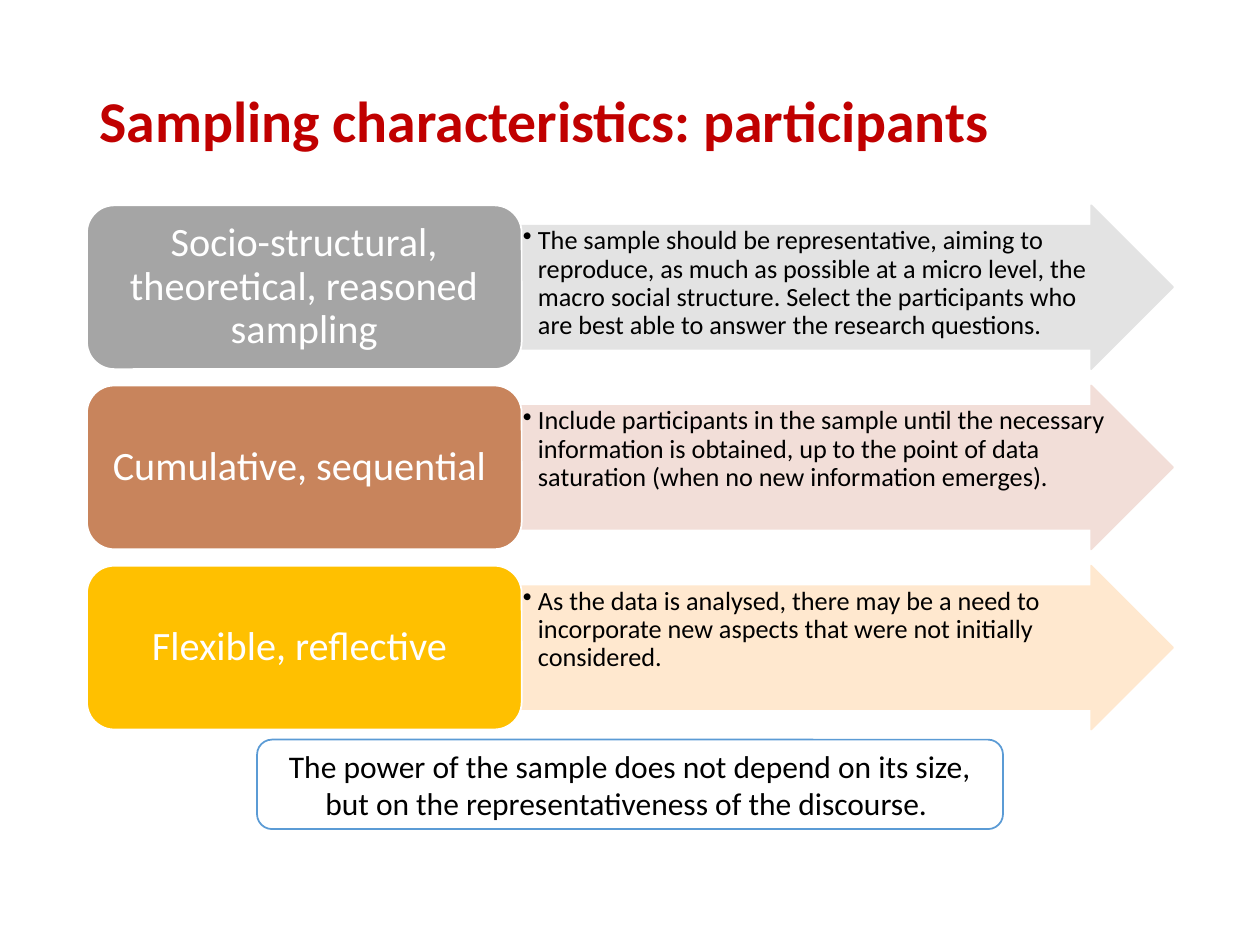
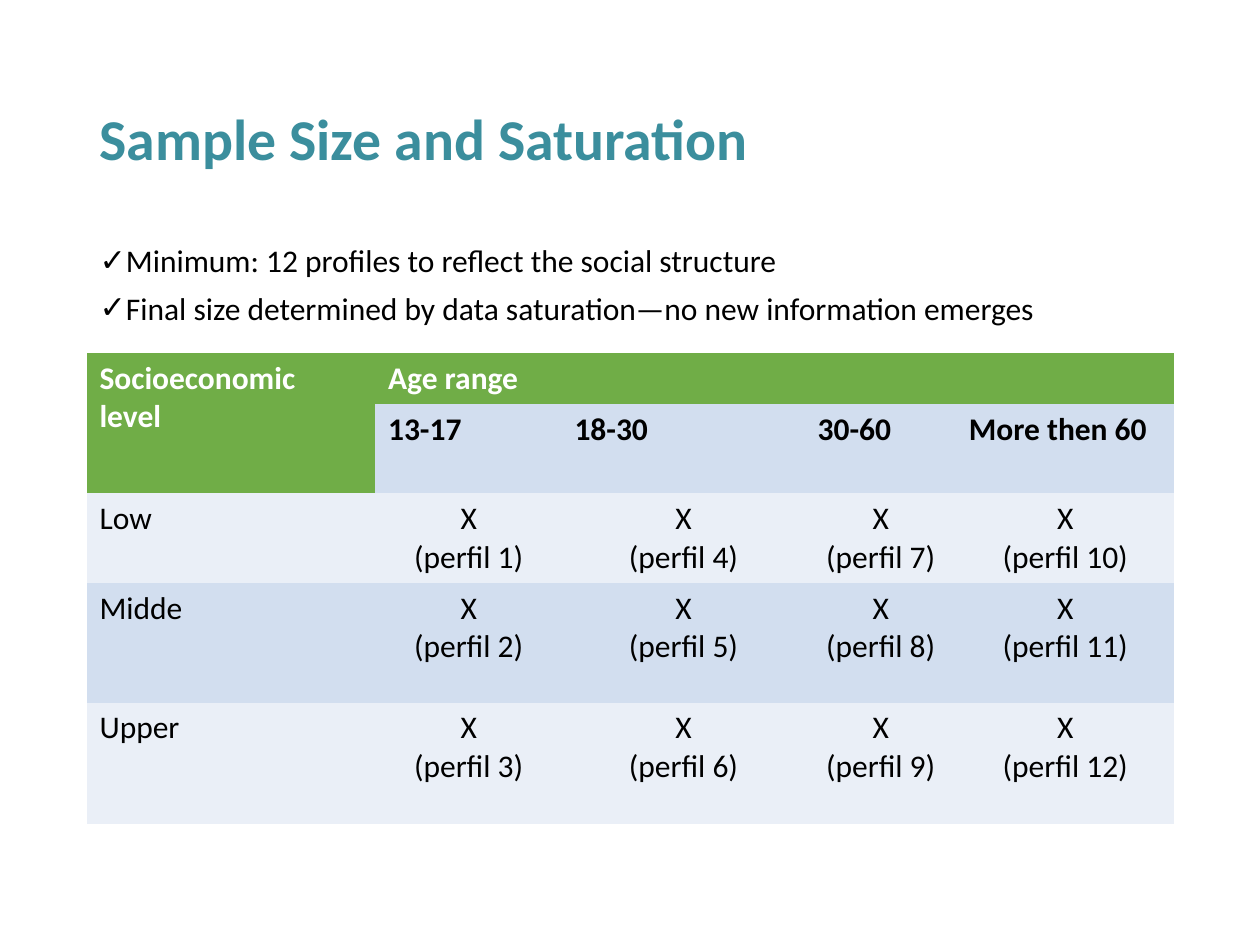
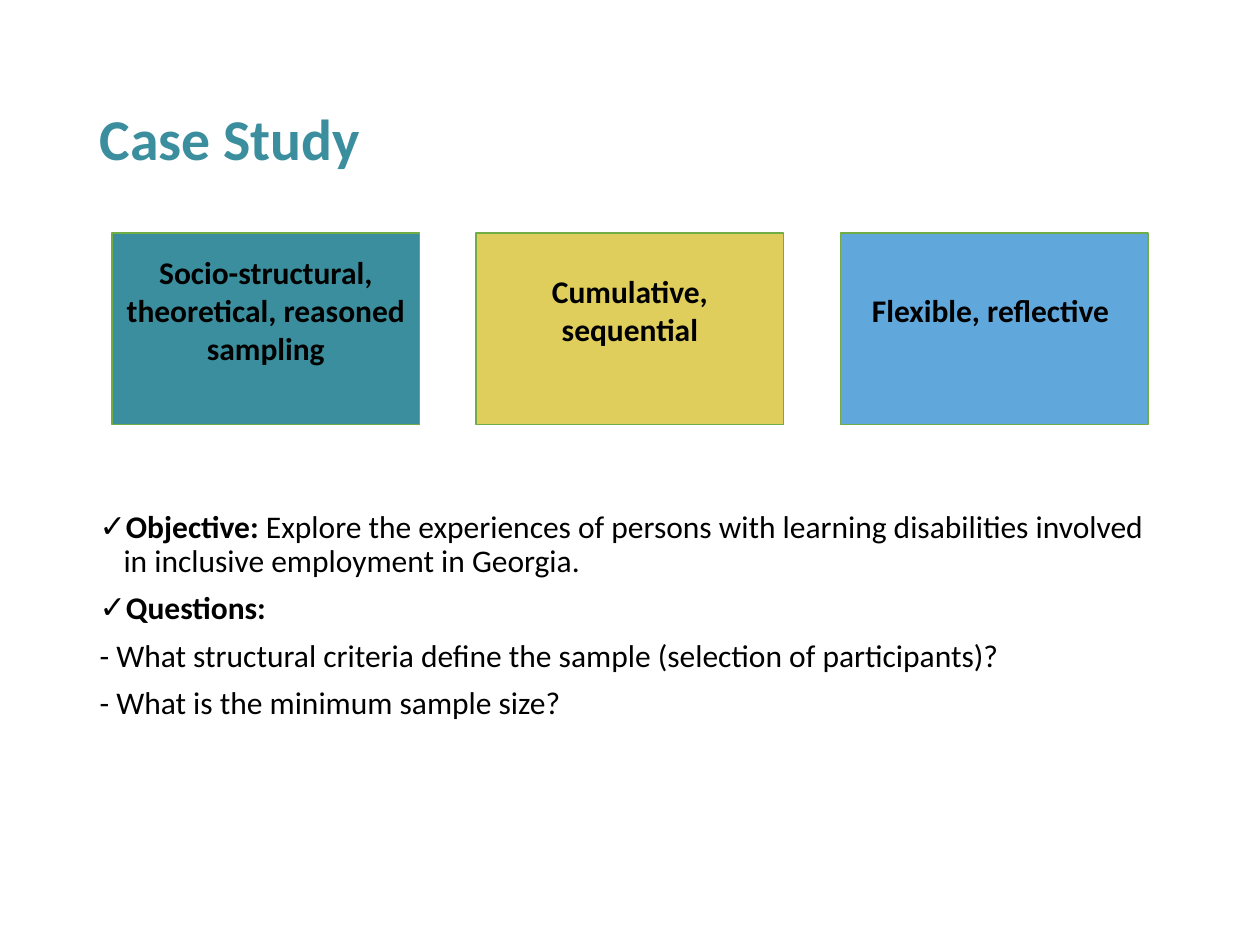
from lxml.etree import SubElement
from pptx import Presentation
from pptx.dml.color import RGBColor
from pptx.enum.shapes import MSO_SHAPE
from pptx.enum.text import MSO_ANCHOR, MSO_AUTO_SIZE, PP_ALIGN
from pptx.oxml.ns import qn
from pptx.util import Inches, Pt

FONT = "Calibri"
PLAIN = "{2D5ABB26-0587-4C30-8999-92F81FD0307C}"
BLACK = RGBColor(0x00, 0x00, 0x00)
WHITE = RGBColor(0xFF, 0xFF, 0xFF)
RED = RGBColor(0xC0, 0x00, 0x00)
TEAL = RGBColor(0x3B, 0x8E, 0x9D)
GREEN = RGBColor(0x70, 0xAD, 0x47)
BLUE = RGBColor(0x5B, 0x9B, 0xD5)
SKY = RGBColor(0x60, 0xA7, 0xDC)
SAND = RGBColor(0xDF, 0xCD, 0x5C)
GREY = RGBColor(0xA5, 0xA5, 0xA5)
SILVER = RGBColor(0xE3, 0xE3, 0xE3)
BROWN = RGBColor(0xC8, 0x84, 0x5C)
BLUSH = RGBColor(0xF2, 0xDE, 0xD8)
GOLD = RGBColor(0xFF, 0xC0, 0x00)
CREAM = RGBColor(0xFF, 0xE8, 0xCF)
BAND = RGBColor(0xD2, 0xDE, 0xEF)
PALE = RGBColor(0xEA, 0xEF, 0xF7)

LEFT, WIDE = 0.69, 8.62

TRAITS = [
    ("Socio-structural, theoretical, reasoned sampling", GREY, SILVER,
     "The sample should be representative, aiming to reproduce, as much as possible "
     "at a micro level, the macro social structure. Select the participants who are "
     "best able to answer the research questions."),
    ("Cumulative, sequential ", BROWN, BLUSH,
     "Include participants in the sample until the necessary information is obtained, "
     "up to the point of data saturation (when no new information emerges)."),
    ("Flexible, reflective ", GOLD, CREAM,
     "As the data is analysed, there may be a need to incorporate new aspects that "
     "were not initially considered."),
]
POWER = ("The power of the sample does not depend on its size, "
         "but on the representativeness of the discourse. ")

SIZES = [
    ("✓", "", "Minimum: 12 profiles to reflect the social structure"),
    ("✓", "", "Final size determined by data saturation—no new information emerges"),
]
AGES = ["13-17", "18-30", "30-60", "More then 60"]
LEVELS = ["Low", "Midde", "Upper"]
COLS = [2.29, 1.48, 1.93, 1.2, 1.73]
ROWS = [0.4, 0.71, 0.71, 0.95, 0.96]

CARDS = [
    ("Socio-structural, theoretical, reasoned sampling", TEAL),
    ("Cumulative, sequential", SAND),
    ("Flexible, reflective ", SKY),
]
CASE = [
    ("✓", "Objective: ", "Explore the experiences of persons with learning disabilities "
     "involved in inclusive employment in Georgia."),
    ("✓", "Questions:", ""),
    ("", "", "- What structural criteria define the sample (selection of participants)?"),
    ("", "", "- What is the minimum sample size?"),
]


def write(frame, lines, size=18, color=BLACK, bold=False, align=PP_ALIGN.LEFT,
          space=1.0, gap=0, indent=0.19):
    for i, (mark, lead, rest) in enumerate(lines):
        para = frame.paragraphs[0] if i == 0 else frame.add_paragraph()
        props = para._p.get_or_add_pPr()
        step = Inches(indent) if mark else 0
        props.set("marL", str(step))
        props.set("indent", str(-step))
        if mark:
            SubElement(props, qn("a:buChar")).set("char", mark)
        else:
            SubElement(props, qn("a:buNone"))
        para.alignment = align
        para.line_spacing = space
        para.space_before = Pt(gap if i else 0)
        for text, heavy in ((lead, True), (rest, bold)):
            if text:
                run = para.add_run()
                run.text = text
                font = run.font
                font.name, font.size, font.bold = FONT, Pt(size), heavy
                font.color.rgb = color


def plain(*texts):
    return [("", "", text) for text in texts]


def place(shape, x, y, w, h):
    shape.left, shape.top, shape.width, shape.height = map(Inches, (x, y, w, h))


def start(deck, layout, title, color=TEAL, top=0.4):
    slide = deck.slides.add_slide(deck.slide_layouts[layout])
    head = slide.shapes.title
    place(head, LEFT, top, WIDE, 1.45)
    head.text_frame.auto_size = MSO_AUTO_SIZE.NONE
    head.text_frame.vertical_anchor = MSO_ANCHOR.MIDDLE
    write(head.text_frame, plain(title), size=33, color=color, bold=True, space=0.9)
    return slide


def fill_body(slide, lines, top, high):
    body = slide.placeholders[1]
    place(body, LEFT, top, WIDE, high)
    body.text_frame.auto_size = MSO_AUTO_SIZE.NONE
    write(body.text_frame, lines, space=0.9, gap=7.5)


def block(slide, kind, box, fill, line):
    shape = slide.shapes.add_shape(kind, *map(Inches, box))
    shape.shadow.inherit = False
    shape.fill.solid()
    shape.fill.fore_color.rgb = fill
    shape.line.color.rgb = line
    shape.line.width = Pt(1)
    shape.text_frame.word_wrap = True
    shape.text_frame.vertical_anchor = MSO_ANCHOR.MIDDLE
    return shape


def add_traits(deck):
    slide = start(deck, 5, "Sampling characteristics: participants", RED, 0.26)
    split, high = 3.45, 1.3
    for i, (name, dark, light, text) in enumerate(TRAITS):
        top = 1.63 + 1.43 * i
        arrow = block(slide, MSO_SHAPE.RIGHT_ARROW,
                      (LEFT + split, top, WIDE - split, high), light, light)
        arrow.adjustments[0], arrow.adjustments[1] = 0.75, 0.5
        frame = arrow.text_frame
        frame.vertical_anchor = MSO_ANCHOR.TOP
        frame.margin_left = frame.margin_right = Inches(0.01)
        frame.margin_top = frame.margin_bottom = Inches(0.01)
        write(frame, [("•", "", text)], size=15, space=0.9, indent=0.12)
        label = block(slide, MSO_SHAPE.ROUNDED_RECTANGLE,
                      (LEFT, top, split, high), dark, WHITE)
        write(label.text_frame, plain(name), size=23, color=WHITE,
              align=PP_ALIGN.CENTER, space=0.9)
    note = block(slide, MSO_SHAPE.ROUNDED_RECTANGLE, (2.04, 5.87, 5.92, 0.71), WHITE, BLUE)
    write(note.text_frame, plain(POWER), align=PP_ALIGN.CENTER)


def add_sizes(deck):
    slide = start(deck, 1, "Sample Size and Saturation")
    fill_body(slide, SIZES, 1.9, 0.8)
    box = map(Inches, (LEFT, 2.8, sum(COLS), sum(ROWS)))
    table = slide.shapes.add_table(len(ROWS), len(COLS), *box).table
    table.first_row = table.horz_banding = False
    table._tbl.tblPr.find(qn("a:tableStyleId")).text = PLAIN
    for col, wide in zip(table.columns, COLS):
        col.width = Inches(wide)
    for row, high in zip(table.rows, ROWS):
        row.height = Inches(high)

    grid = [[["Socioeconomic level"], ["Age range"]], [[]] + [[age] for age in AGES]]
    for r, level in enumerate(LEVELS):
        marks = [["X", f"(perfil {len(LEVELS) * c + r + 1})"] for c in range(len(AGES))]
        grid.append([[level]] + marks)
    for r in range(len(ROWS)):
        for c in range(len(COLS)):
            cell = table.cell(r, c)
            head = r == 0 or (r == 1 and c == 0)
            cell.fill.solid()
            cell.fill.fore_color.rgb = GREEN if head else BAND if r % 2 else PALE
            if c < len(grid[r]):
                write(cell.text_frame, plain(*grid[r][c]), bold=r < 2,
                      color=WHITE if head else BLACK,
                      align=PP_ALIGN.CENTER if r > 1 and c else PP_ALIGN.LEFT)
    table.cell(0, 0).merge(table.cell(1, 0))
    table.cell(0, 1).merge(table.cell(0, len(COLS) - 1))


def add_case(deck):
    slide = start(deck, 1, "Case Study")
    fill_body(slide, CASE, 4.01, 2.06)
    for i, (name, color) in enumerate(CARDS):
        card = block(slide, MSO_SHAPE.RECTANGLE,
                     (0.89 + 2.89 * i, 1.85, 2.44, 1.52), color, GREEN)
        card.text_frame.margin_bottom = Inches(0.35)
        write(card.text_frame, plain(name), bold=True, align=PP_ALIGN.CENTER)


def main():
    deck = Presentation()
    deck.slide_width, deck.slide_height = Inches(10), Inches(7.5)
    add_traits(deck)
    add_sizes(deck)
    add_case(deck)
    deck.save("out.pptx")


if __name__ == "__main__":
    main()
